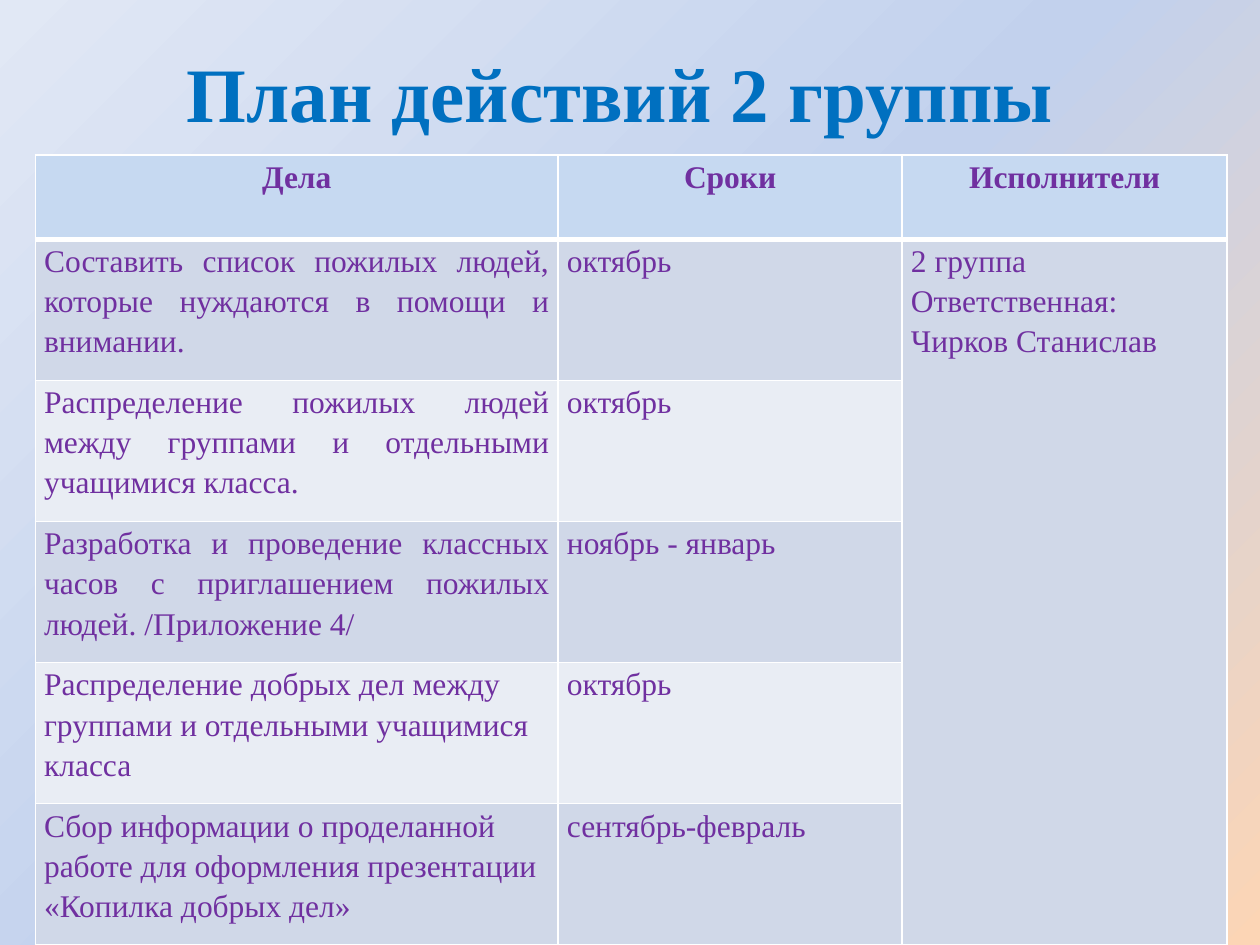
from typing import NamedTuple

from lxml.etree import SubElement
from pptx import Presentation
from pptx.dml.color import RGBColor
from pptx.enum.text import MSO_ANCHOR, PP_ALIGN
from pptx.oxml import parse_xml
from pptx.oxml.ns import nsdecls, qn
from pptx.util import Inches, Pt

FONT = "Times New Roman"
TITLE_COLOR = "0070C0"
TABLE_TEXT = "7030A0"
BORDER = "FFFFFF"
HEADER_FILL = "C6D9F1"
BAND_FILLS = ("D0D8E8", "E9EDF4")
BACKGROUND_STOPS = ((0, "FCD5B5"), (50, "C2D1ED"), (100, "E1E8F5"))
COLUMN_WIDTHS = (4.15, 2.73, 2.58)
HEADER_HEIGHT, TASK_HEIGHT = 0.67, 1.12
HEADERS = ("Дела", "Сроки", "Исполнители")
PERFORMERS = ("2 группа", "Ответственная:", "Чирков Станислав")


class Task(NamedTuple):
    description: str
    period: str
    alignment: PP_ALIGN = PP_ALIGN.LEFT


TASKS = (
    Task("Составить список пожилых людей, которые нуждаются в помощи и внимании.",
         "октябрь", PP_ALIGN.JUSTIFY),
    Task("Распределение пожилых людей между группами и отдельными учащимися класса.",
         "октябрь", PP_ALIGN.JUSTIFY),
    Task("Разработка и проведение классных часов с приглашением пожилых людей. /Приложение 4/",
         "ноябрь - январь", PP_ALIGN.JUSTIFY),
    Task("Распределение добрых дел между группами и отдельными учащимися класса", "октябрь"),
    Task("Сбор информации о проделанной работе для оформления презентации «Копилка добрых дел»",
         "сентябрь-февраль"),
)


def color(value: str) -> RGBColor:
    return RGBColor.from_string(value)


def add_run(paragraph, text: str, size: int, text_color: str, bold: bool = False) -> None:
    run = paragraph.add_run()
    run.text = text
    run.font.name = FONT
    run.font.size = Pt(size)
    run.font.bold = bold
    run.font.color.rgb = color(text_color)


def set_background(slide) -> None:
    stops = "".join(
        f'<a:gs pos="{position * 1000}"><a:srgbClr val="{value}"/></a:gs>'
        for position, value in BACKGROUND_STOPS
    )
    background = parse_xml(
        f'<p:bg {nsdecls("p", "a")}><p:bgPr><a:gradFill rotWithShape="1">'
        f'<a:gsLst>{stops}</a:gsLst><a:lin ang="{225 * 60000}" scaled="0"/>'
        "</a:gradFill><a:effectLst/></p:bgPr></p:bg>"
    )
    slide.element.cSld.insert(0, background)


def add_title(slide) -> None:
    title = slide.shapes.add_textbox(Inches(0.5), Inches(0.3), Inches(9), Inches(0.85))
    frame = title.text_frame
    frame.word_wrap = True
    frame.vertical_anchor = MSO_ANCHOR.MIDDLE
    paragraph = frame.paragraphs[0]
    paragraph.alignment = PP_ALIGN.CENTER
    add_run(paragraph, "План действий 2 группы ", 44, TITLE_COLOR, bold=True)


def set_borders(cell, top: float = 1, bottom: float = 1) -> None:
    properties = cell._tc.get_or_add_tcPr()
    for side, width in (("L", 1), ("R", 1), ("T", top), ("B", bottom)):
        line = SubElement(properties, qn(f"a:ln{side}"), w=str(Pt(width)))
        fill = SubElement(line, qn("a:solidFill"))
        SubElement(fill, qn("a:srgbClr"), val=BORDER)


def style_cell(cell, fill: str, top: float = 1, bottom: float = 1) -> None:
    set_borders(cell, top, bottom)
    cell.fill.solid()
    cell.fill.fore_color.rgb = color(fill)
    cell.margin_left = cell.margin_right = Inches(0.07)
    cell.margin_top = cell.margin_bottom = 0


def write_cell(cell, lines: tuple[str, ...], alignment: PP_ALIGN = PP_ALIGN.LEFT,
               bold: bool = False) -> None:
    frame = cell.text_frame
    for index, text in enumerate(lines):
        paragraph = frame.add_paragraph() if index else frame.paragraphs[0]
        paragraph.alignment = alignment
        paragraph.line_spacing = 1.15
        add_run(paragraph, text, 18, TABLE_TEXT, bold)


def add_plan_table(slide) -> None:
    height = HEADER_HEIGHT + TASK_HEIGHT * len(TASKS)
    table = slide.shapes.add_table(
        len(TASKS) + 1, len(HEADERS), Inches(0.28), Inches(1.23),
        Inches(sum(COLUMN_WIDTHS)), Inches(height),
    ).table
    for column, width in zip(table.columns, COLUMN_WIDTHS):
        column.width = Inches(width)
    for index, row in enumerate(table.rows):
        row.height = Inches(TASK_HEIGHT if index else HEADER_HEIGHT)

    for column, header in enumerate(HEADERS):
        cell = table.cell(0, column)
        style_cell(cell, HEADER_FILL, bottom=3)
        write_cell(cell, (header,), PP_ALIGN.CENTER, bold=True)

    for row, task in enumerate(TASKS, start=1):
        for column in range(len(HEADERS)):
            band = BAND_FILLS[0] if column == 2 else BAND_FILLS[(row - 1) % 2]
            style_cell(table.cell(row, column), band, top=3 if row == 1 else 1)
        write_cell(table.cell(row, 0), (task.description,), task.alignment)
        write_cell(table.cell(row, 1), (task.period,))

    performers = table.cell(1, 2)
    performers.merge(table.cell(len(TASKS), 2))
    write_cell(performers, PERFORMERS)


def main() -> None:
    presentation = Presentation()
    presentation.slide_width = Inches(10)
    presentation.slide_height = Inches(7.5)
    slide = presentation.slides.add_slide(presentation.slide_layouts[6])
    set_background(slide)
    add_title(slide)
    add_plan_table(slide)
    presentation.save("out.pptx")


if __name__ == "__main__":
    main()
